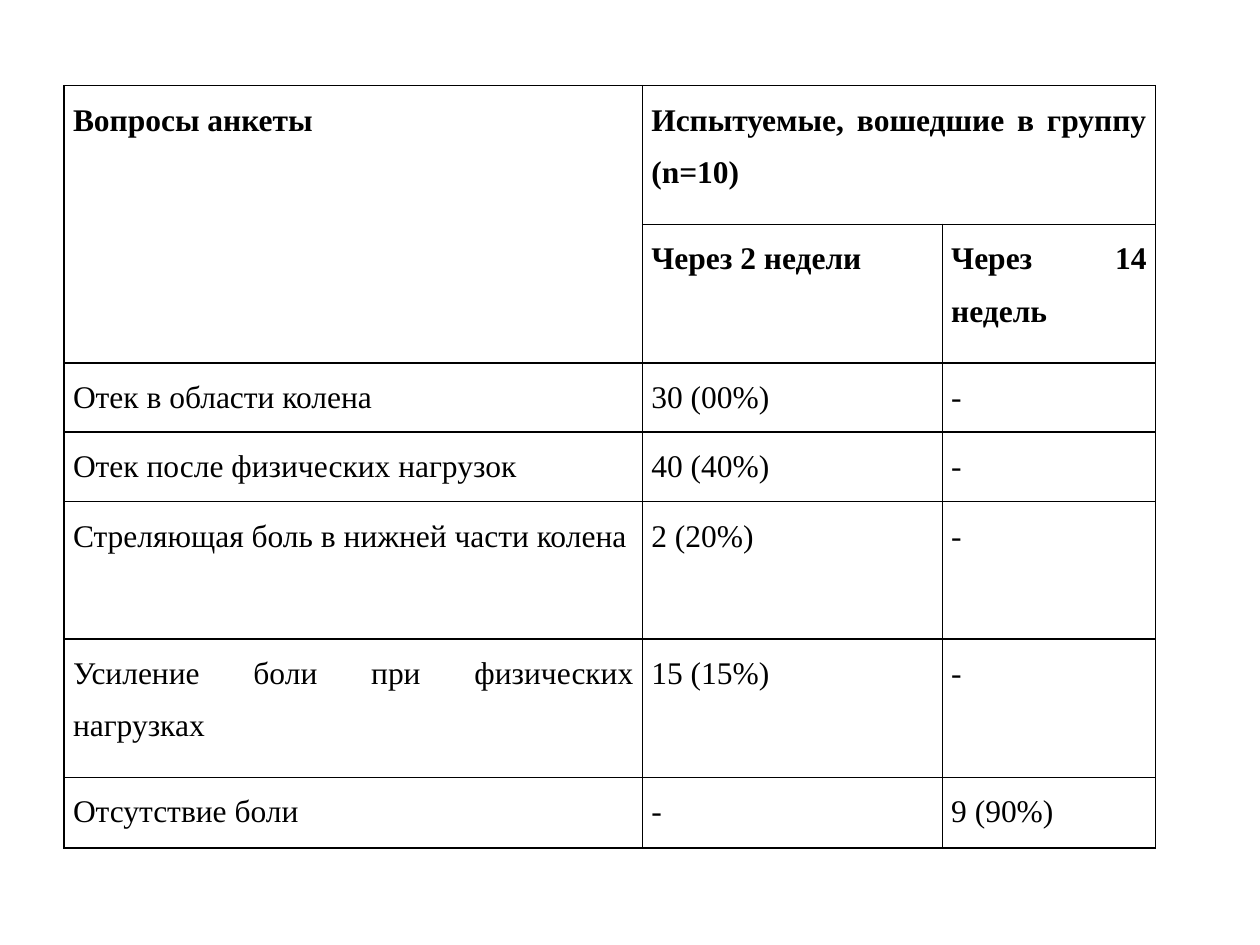
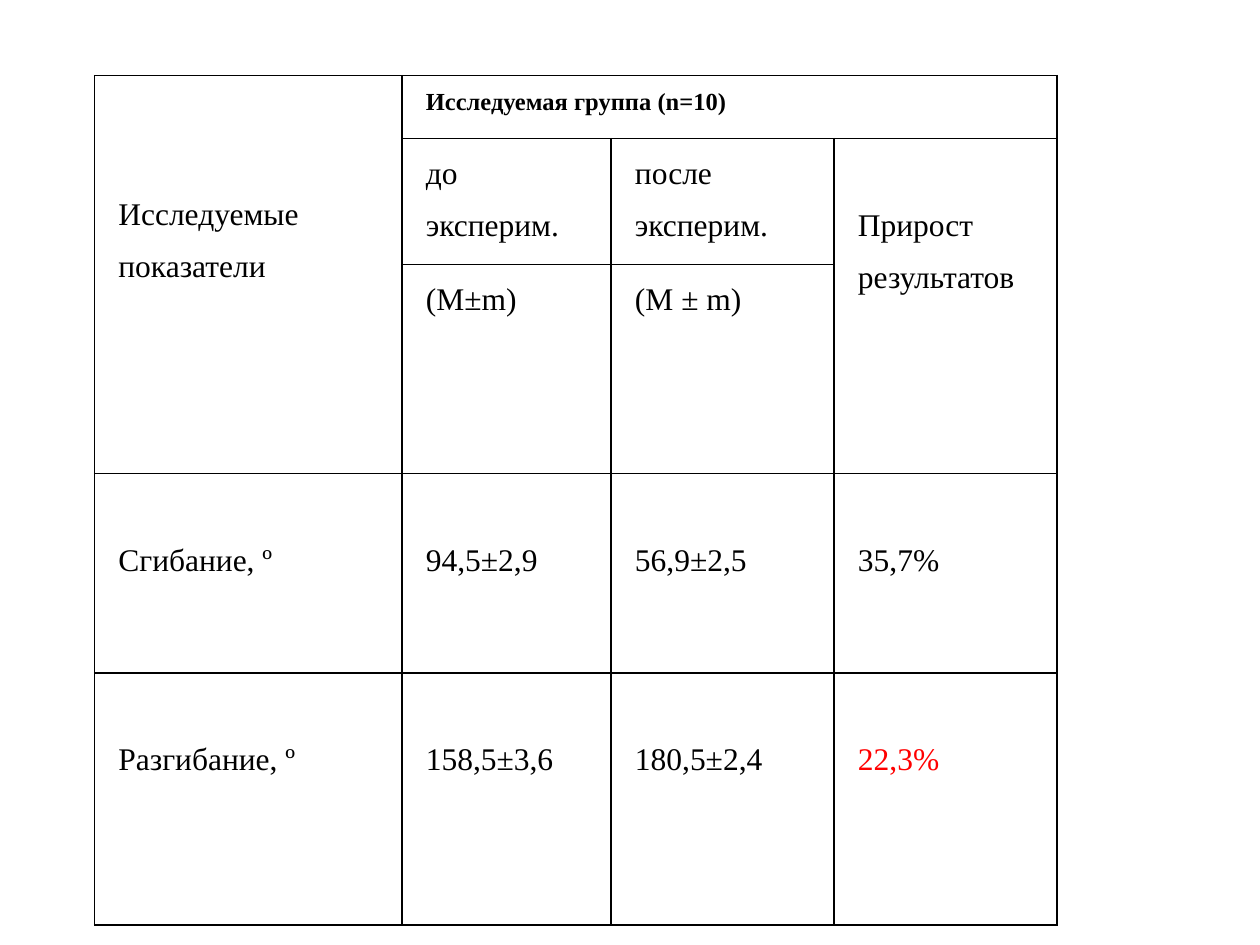
from lxml.etree import SubElement
from pptx import Presentation
from pptx.dml.color import RGBColor
from pptx.enum.text import MSO_ANCHOR, PP_ALIGN
from pptx.oxml.ns import qn
from pptx.util import Inches, Pt

COLORS = {"text": "000000", "border": "000000", "paper": "FFFFFF", "accent": "FF0000"}
FONT = "Times New Roman"
GRID_COLUMNS, GRID_ROWS = 100, 75
UNIT = Inches(10) // GRID_COLUMNS
TEXT_LINE = 4.14
BODY = {"name": FONT, "size": Pt(18), "bold": False}
HEADING = BODY | {"bold": True}
SMALL_HEADING = HEADING | {"size": Pt(14)}
PARAGRAPH = {"alignment": PP_ALIGN.JUSTIFY, "line_spacing": 1.5}
PLAIN_TABLE = {"first_row": False, "horz_banding": False}

SURVEY_ROWS = [
    ("Отек в области колена", "30 (00%)", "-"),
    ("Отек после физических нагрузок", "40 (40%)", "-"),
    ("Стреляющая боль в нижней части колена", "2 (20%)", "-"),
    ("Усиление боли при физических нагрузках", "15 (15%)", "-"),
    ("Отсутствие боли", "-", "9 (90%)"),
]
MOTION_ROWS = [
    ("Сгибание, º", "94,5±2,9", "56,9±2,5", "35,7%"),
    ("Разгибание, º", "158,5±3,6", "180,5±2,4", "22,3%"),
]


def units(count):
    return round(count * UNIT)


def apply_format(target, values):
    for name, value in values.items():
        setattr(target, name, value)


def add_borders(cell):
    properties = cell._tc.get_or_add_tcPr()
    for side in ("a:lnL", "a:lnR", "a:lnT", "a:lnB"):
        line = SubElement(properties, qn(side), w=str(Pt(1)))
        fill = SubElement(line, qn("a:solidFill"))
        SubElement(fill, qn("a:srgbClr"), val=COLORS["border"])


def style_cell(cell, indent):
    add_borders(cell)
    cell.fill.solid()
    cell.fill.fore_color.rgb = RGBColor.from_string(COLORS["paper"])
    apply_format(cell, {
        "margin_left": units(0.7 + indent),
        "margin_right": units(0.7),
        "margin_top": 0,
        "margin_bottom": 0,
        "vertical_anchor": MSO_ANCHOR.TOP,
    })


def add_grid_table(presentation, left, top, widths, heights, indent=0):
    slide = presentation.slides.add_slide(presentation.slide_layouts[6])
    frame = slide.shapes.add_table(
        len(heights), len(widths), units(left), units(top),
        units(sum(widths)), units(sum(heights)))
    table = frame.table
    apply_format(table, PLAIN_TABLE)
    for column, width in zip(table.columns, widths):
        column.width = units(width)
    for row, height in zip(table.rows, heights):
        row.height = units(height)
    for cell in table.iter_cells():
        style_cell(cell, indent)
    return table


def write_cell(table, row, column, text, font=BODY, color="text", lines_above=0, span=(1, 1)):
    cell = table.cell(row, column)
    if span != (1, 1):
        cell.merge(table.cell(row + span[0] - 1, column + span[1] - 1))
    cell.margin_top = units(lines_above * TEXT_LINE)
    cell.text = text
    for paragraph in cell.text_frame.paragraphs:
        apply_format(paragraph, PARAGRAPH)
        for run in paragraph.runs:
            apply_format(run.font, font)
            run.font.color.rgb = RGBColor.from_string(COLORS[color])


def write_rows(table, first_row, rows, lines_above=0):
    for row, texts in enumerate(rows, first_row):
        for column, text in enumerate(texts):
            write_cell(table, row, column, text, lines_above=lines_above)


def add_survey_slide(presentation):
    table = add_grid_table(
        presentation, 5.1, 6.8, [45.9, 23.8, 16.9], [11, 11, 5.5, 5.5, 10.9, 11, 5.6])
    write_cell(table, 0, 0, "Вопросы анкеты", HEADING, span=(2, 1))
    write_cell(table, 0, 1, "Испытуемые, вошедшие в группу (n=10)", HEADING, span=(1, 2))
    write_cell(table, 1, 1, "Через 2 недели", HEADING)
    write_cell(table, 1, 2, "Через 14 недель", HEADING)
    write_rows(table, 2, SURVEY_ROWS)


def add_motion_slide(presentation):
    table = add_grid_table(
        presentation, 7.5, 6, [24.4, 16.6, 17.7, 17.7], [5, 10, 16.6, 15.8, 20], indent=1.2)
    write_cell(table, 0, 0, "Исследуемые\nпоказатели", lines_above=2, span=(3, 1))
    write_cell(table, 0, 1, "Исследуемая группа (n=10)", SMALL_HEADING, span=(1, 3))
    write_rows(table, 1, [("до\nэксперим.", "после\nэксперим.")][:0])
    for column, (stage, measure) in enumerate(
            [("до\nэксперим.", "(M±m)"), ("после\nэксперим.", "(M ± m)")], 1):
        write_cell(table, 1, column, stage)
        write_cell(table, 2, column, measure)
    write_cell(table, 1, 3, "Прирост\nрезультатов", lines_above=1, span=(2, 1))
    write_rows(table, 3, MOTION_ROWS, lines_above=1)
    write_cell(table, 4, 3, MOTION_ROWS[1][3], color="accent", lines_above=1)


def main():
    presentation = Presentation()
    apply_format(presentation, {
        "slide_width": GRID_COLUMNS * UNIT,
        "slide_height": GRID_ROWS * UNIT,
    })
    add_survey_slide(presentation)
    add_motion_slide(presentation)
    presentation.save("out.pptx")


if __name__ == "__main__":
    main()
